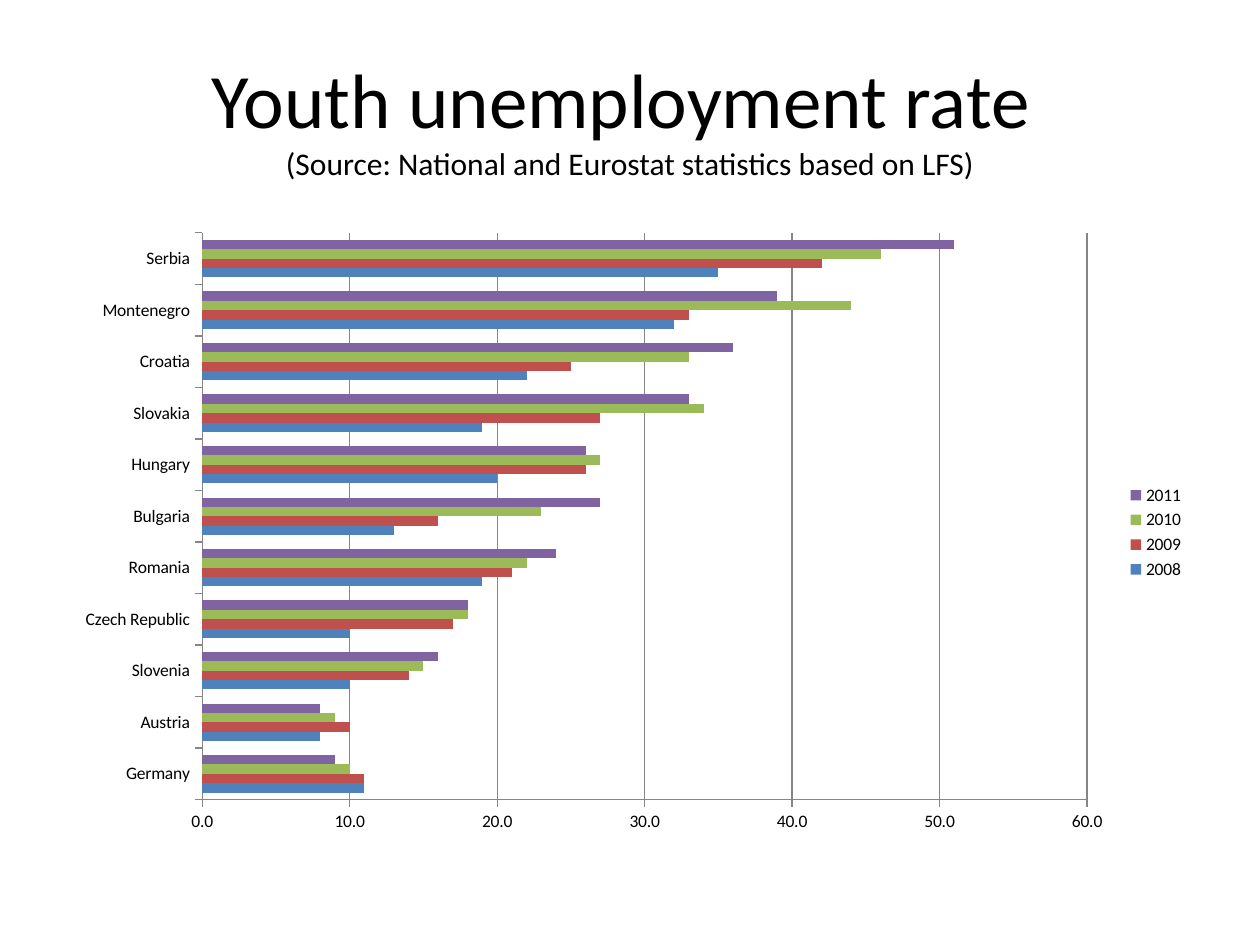
from pptx import Presentation
from pptx.chart.data import CategoryChartData
from pptx.dml.color import RGBColor
from pptx.enum import chart as kinds, text
from pptx.util import Pt

FONT = "Calibri"
BLACK, GREY = "000000", "868686"
HEADING = [("Youth unemployment rate ", 44),
           ("(Source: National and Eurostat statistics based on LFS)", 18)]
YEARS = [("2008", "4F81BD"), ("2009", "C0504D"),
         ("2010", "9BBB59"), ("2011", "8064A2")]
RATES = {
    "Germany": (11, 11, 10, 9),
    "Austria": (8, 10, 9, 8),
    "Slovenia": (10, 14, 15, 16),
    "Czech Republic": (10, 17, 18, 18),
    "Romania": (19, 21, 22, 24),
    "Bulgaria": (13, 16, 23, 27),
    "Hungary": (20, 26, 27, 26),
    "Slovakia": (19, 27, 34, 33),
    "Croatia": (22, 25, 33, 36),
    "Montenegro": (32, 33, 44, 39),
    "Serbia": (35, 42, 46, 51),
}
LEFT, WIDTH = Pt(36), Pt(648)


def color(value):
    return RGBColor.from_string(value)


def add_heading(page):
    box = page.shapes.add_textbox(LEFT, Pt(21.6), WIDTH, Pt(90))
    frame = box.text_frame
    frame.word_wrap = True
    frame.vertical_anchor = text.MSO_ANCHOR.MIDDLE
    para = frame.paragraphs[0]
    para.alignment = text.PP_ALIGN.CENTER
    para.font.name = FONT
    para.font.color.rgb = color(BLACK)
    for index, (words, size) in enumerate(HEADING):
        if index:
            para.add_line_break()
        span = para.add_run()
        span.text = words
        span.font.size = Pt(size)


def add_rates(page):
    data = CategoryChartData(number_format="0.0")
    data.categories = list(RATES)
    for (year, _), values in zip(YEARS, zip(*RATES.values())):
        data.add_series(year, values)
    chart = page.shapes.add_chart(kinds.XL_CHART_TYPE.BAR_CLUSTERED,
                                  LEFT, Pt(126), WIDTH, Pt(356.4), data).chart
    chart.has_title = False
    chart.font.name = FONT
    chart.font.size = Pt(10)
    chart.font.color.rgb = color(BLACK)

    plot = chart.plots[0]
    plot.gap_width = 150
    plot.vary_by_categories = False
    for series, (_, fill) in zip(plot.series, YEARS):
        series.format.fill.solid()
        series.format.fill.fore_color.rgb = color(fill)

    rates = chart.value_axis
    rates.minimum_scale, rates.maximum_scale, rates.major_unit = 0, 60, 10
    rates.has_major_gridlines = True
    rates.tick_labels.number_format = "0.0"
    rates.tick_labels.number_format_is_linked = False
    for axis in (chart.category_axis, rates):
        axis.major_tick_mark = kinds.XL_TICK_MARK.OUTSIDE
    for part in (chart.category_axis, rates, rates.major_gridlines):
        part.format.line.color.rgb = color(GREY)
        part.format.line.width = Pt(0.75)

    chart.has_legend = True
    chart.legend.position = kinds.XL_LEGEND_POSITION.RIGHT
    chart.legend.include_in_layout = False


def main():
    deck = Presentation()
    deck.slide_width, deck.slide_height = Pt(720), Pt(540)
    page = deck.slides.add_slide(deck.slide_layouts[6])
    add_heading(page)
    add_rates(page)
    deck.save("out.pptx")


if __name__ == "__main__":
    main()
